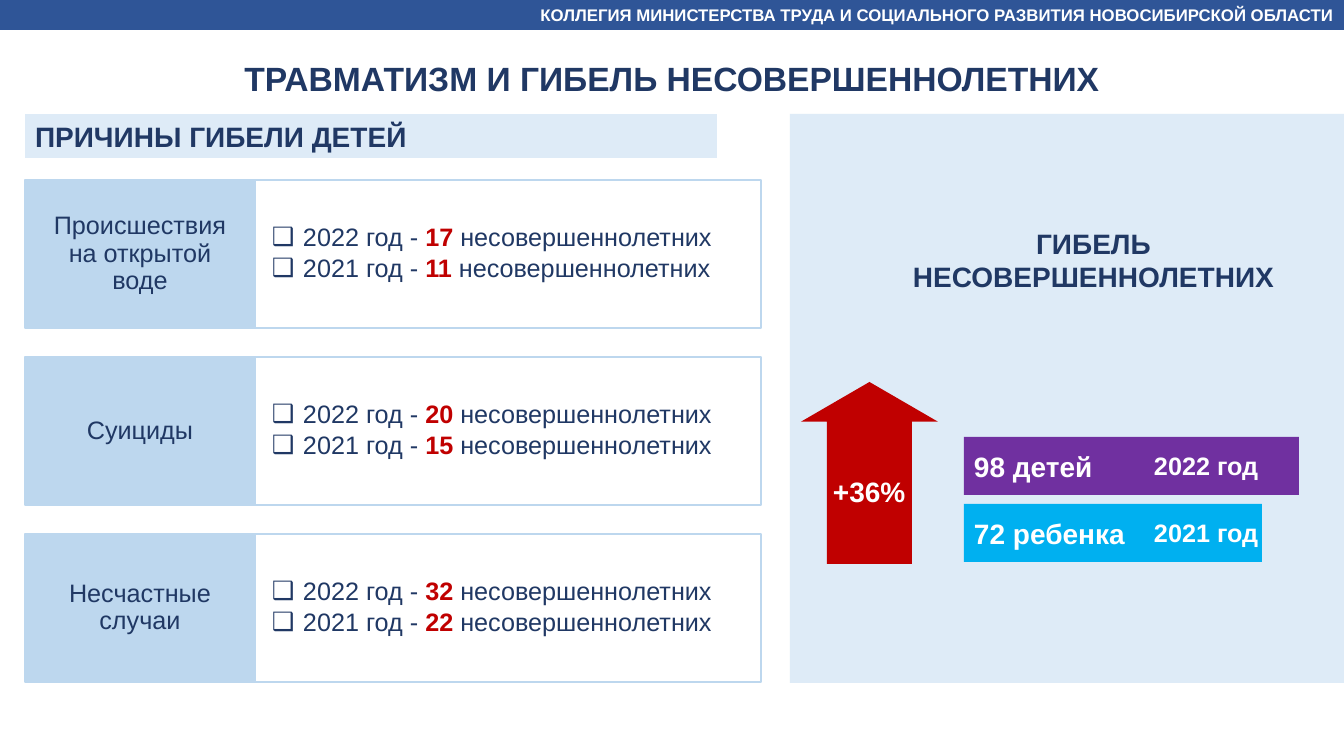
from pptx import Presentation
from pptx.dml.color import RGBColor
from pptx.enum.shapes import MSO_SHAPE as Preset
from pptx.enum.text import MSO_ANCHOR as Anchor, MSO_AUTO_SIZE as AutoSize, PP_ALIGN as Align
from pptx.oxml.ns import qn
from pptx.util import Emu, Pt
from lxml.etree import SubElement

SLIDE_WIDTH, SLIDE_HEIGHT = 1344, 756
EMU_PER_PX = 12192000 / SLIDE_WIDTH
NAVY, RED, WHITE = "203864", "C00000", "FFFFFF"
PALE, SKY = "DEEBF7", "BDD7EE"


def px(length):
    """Turn pixels into EMU."""
    return Emu(round(length * EMU_PER_PX))


def color(hex_code):
    """Turn a hex string into a colour."""
    return RGBColor.from_string(hex_code)


class SlideBuilder:
    """Holds the text style and the current slide."""

    font = {"name": "Arial", "size": Pt(18), "bold": False}
    frame = {"word_wrap": True, "auto_size": AutoSize.NONE, "vertical_anchor": Anchor.MIDDLE}
    margins = (10, 5, 10, 5)

    def __init__(self, slide):
        """Start work on a slide."""
        self.slide = slide

    def paint(self, shape, fill=None, line=None, alpha=None):
        """Set fill, outline and shadow."""
        shape.shadow.inherit = False
        if fill:
            shape.fill.solid()
            shape.fill.fore_color.rgb = color(fill)
        if alpha:
            tone = shape.fill._xPr.find(qn("a:solidFill"))[0]
            SubElement(tone, qn("a:alpha"), val=str(alpha * 1000))
        if line:
            shape.line.color.rgb = color(line)
            shape.line.width = Pt(1)
        else:
            shape.line.fill.background()

    def set_text(self, shape, lines, size=18, tint=NAVY, bold=False, align=Align.LEFT,
                 margins=margins, bullet=None, spacing=1.0, after=0):
        """Fill in paragraphs given as lists of (words, font overrides)."""
        text_frame = shape.text_frame
        sides = ("margin_left", "margin_top", "margin_right", "margin_bottom")
        layout = self.frame | dict(zip(sides, map(px, margins)))
        for name, value in layout.items():
            setattr(text_frame, name, value)
        for index, runs in enumerate(lines):
            paragraph = text_frame.add_paragraph() if index else text_frame.paragraphs[0]
            if bullet:
                properties = paragraph._p.get_or_add_pPr()
                properties.set("marL", str(px(47)))
                properties.set("indent", str(px(-31)))
                SubElement(properties, qn("a:buFont"), typeface="Arial")
                SubElement(properties, qn("a:buChar"), char=bullet)
            rhythm = {"alignment": align, "line_spacing": spacing,
                      "space_before": Pt(0), "space_after": Pt(after)}
            for name, value in rhythm.items():
                setattr(paragraph, name, value)
            for words, overrides in runs:
                run = paragraph.add_run()
                run.text = words
                style = self.font | {"size": Pt(size), "bold": bold, "tint": tint} | overrides
                run.font.color.rgb = color(style.pop("tint"))
                for name, value in style.items():
                    setattr(run.font, name, value)

    def block(self, box, fill, words=None, preset=Preset.RECTANGLE, line=None, **text):
        """Add a filled preset shape."""
        shape = self.slide.shapes.add_shape(preset, *map(px, box))
        self.paint(shape, fill, line)
        if words:
            self.set_text(shape, [[(words, {})]], **text)
        return shape

    def label(self, box, words, **text):
        """Add a text box."""
        self.set_text(self.slide.shapes.add_textbox(*map(px, box)), [[(words, {})]], **text)

    def placeholder(self, number, box, lines, fill=None, line=None, alpha=None, **text):
        """Place, paint and fill a layout placeholder."""
        holder = self.slide.placeholders[number]
        for name, length in zip(("left", "top", "width", "height"), box):
            setattr(holder, name, px(length))
        self.paint(holder, fill, line, alpha)
        self.set_text(holder, lines, **text)


def main():
    """Build the slide and save it."""
    deck = Presentation()
    deck.slide_width, deck.slide_height = px(SLIDE_WIDTH), px(SLIDE_HEIGHT)
    page = SlideBuilder(deck.slides.add_slide(deck.slide_layouts[4]))

    page.block((790, 114, 554, 569), PALE)
    page.block((0, 0, SLIDE_WIDTH, 30), "2F5597",
               "КОЛЛЕГИЯ МИНИСТЕРСТВА ТРУДА И СОЦИАЛЬНОГО РАЗВИТИЯ НОВОСИБИРСКОЙ ОБЛАСТИ",
               size=12, tint=WHITE, bold=True, align=Align.RIGHT)
    page.placeholder(0, (0, 53, SLIDE_WIDTH, 51), [[("ТРАВМАТИЗМ И ГИБЕЛЬ НЕСОВЕРШЕННОЛЕТНИХ", {})]],
                     size=24, bold=True, align=Align.CENTER)
    page.placeholder(1, (25, 114, 692, 44), [[("ПРИЧИНЫ ГИБЕЛИ ДЕТЕЙ", {})]],
                     fill=PALE, size=20, bold=True)

    causes = [("Происшествия на открытой воде", 17, 11),
              ("Суициды", 20, 15),
              ("Несчастные случаи", 32, 22)]
    for row, (cause, *deaths) in enumerate(causes):
        top = 180 + 177 * row
        yearly = [[(f"{year} год - ", {}), (str(count), {"tint": RED, "bold": True}),
                   (" несовершеннолетних", {})]
                  for year, count in zip((2022, 2021), deaths)]
        page.placeholder(row + 2, (255, top, 506, 148), yearly, fill=WHITE, line=SKY, alpha=90,
                         margins=(1, 1, 34, 1), bullet="❑", spacing=0.9, after=3)
        page.block((25, top, 230, 148), SKY, cause, line=SKY, align=Align.CENTER,
                   margins=(15, 11, 15, 11), spacing=0.9)

    page.label((888, 230, 411, 60), "ГИБЕЛЬ НЕСОВЕРШЕННОЛЕТНИХ",
               size=20, bold=True, align=Align.CENTER)
    growth = page.block((801, 382, 137, 182), RED, preset=Preset.UP_ARROW)
    growth.adjustments[0], growth.adjustments[1] = 0.62, 0.29
    page.label((823, 469, 130, 44), "+36%", size=20, tint=WHITE, bold=True)

    totals = [("98 детей", "2022 год", 335, "7030A0"), ("72 ребенка", "2021 год", 298, "00B0F0")]
    for row, (total, year, width, fill) in enumerate(totals):
        top = 437 + 67 * row
        page.block((964, top, width, 58), fill, total, size=20, tint=WHITE, bold=True)
        page.label((1144, top + 8, 183, 40), year, tint=WHITE, bold=True)

    deck.save("out.pptx")


if __name__ == "__main__":
    main()
